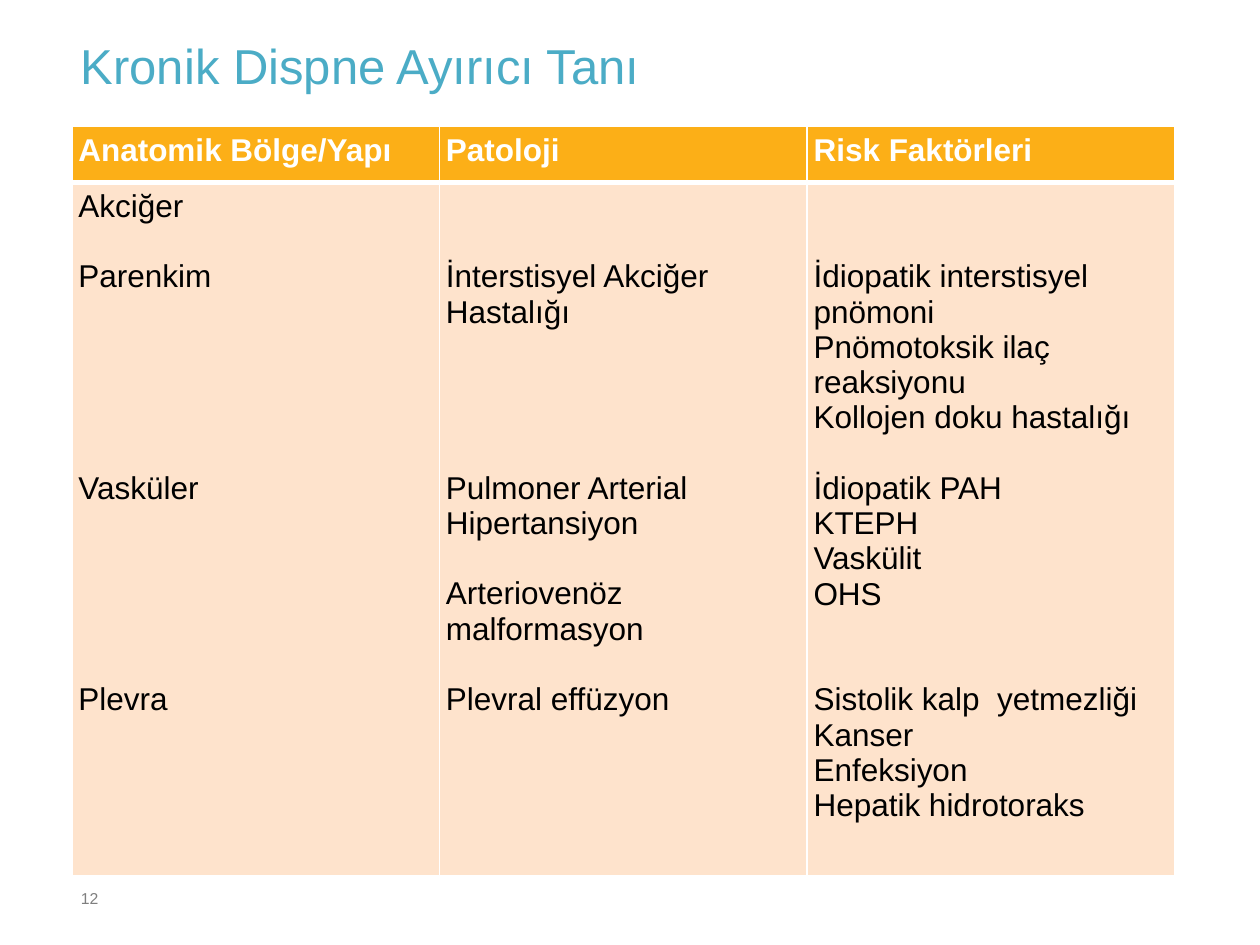
from lxml.etree import SubElement
from pptx import Presentation
from pptx.dml.color import RGBColor
from pptx.enum.text import MSO_ANCHOR, MSO_AUTO_SIZE as AutoSize
from pptx.oxml import parse_xml
from pptx.oxml.ns import nsdecls, qn
from pptx.util import Cm, Pt

TEAL = RGBColor(0x4B, 0xAC, 0xC6)
ORANGE = RGBColor(0xFC, 0xAF, 0x17)
PEACH = RGBColor(0xFE, 0xE3, 0xCC)
WHITE = RGBColor(0xFF, 0xFF, 0xFF)
BLACK = RGBColor(0, 0, 0)
GREY = RGBColor(0x7F, 0x7F, 0x7F)

LINE = 20.1  # points taken by one line of 18 pt text
HEADERS = ["Anatomik Bölge/Yapı", "Patoloji", "Risk Faktörleri"]
# Each column: (empty lines above, text)
COLUMNS = [
    [(0, "Akciğer"), (1, "Parenkim"), (5, "Vasküler"), (5, "Plevra")],
    [(2, "İnterstisyel Akciğer Hastalığı"),
     (4, "Pulmoner Arterial Hipertansiyon"),
     (1, "Arteriovenöz malformasyon"),
     (1, "Plevral effüzyon")],
    [(2, "İdiopatik interstisyel pnömoni"),
     (0, "Pnömotoksik ilaç reaksiyonu"),
     (0, "Kollojen doku hastalığı"),
     (1, "İdiopatik PAH"), (0, "KTEPH"), (0, "Vaskülit"), (0, "OHS"),
     (2, "Sistolik kalp  yetmezliği"),
     (0, "Kanser"), (0, "Enfeksiyon"), (0, "Hepatik hidrotoraks")],
]


class SlideBuilder:
    font = "Arial"
    margin = Cm(0.13)
    sides = ("margin_left", "margin_top", "margin_right", "margin_bottom")

    def __init__(self, s):
        self.s = s

    def add_run(self, p, text, size, color, bold=False):
        r = p.add_run()
        r.text = text
        font = {"name": self.font, "size": Pt(size), "bold": bold}
        for name, value in font.items():
            setattr(r.font, name, value)
        r.font.color.rgb = color

    def pad(self, target):
        for side in self.sides:
            setattr(target, side, self.margin)

    def text(self, box, text, size, color, wrap=True, line_spacing=None):
        tf = self.s.shapes.add_textbox(*map(Cm, box)).text_frame
        self.pad(tf)
        tf.word_wrap = wrap
        tf.auto_size = AutoSize.NONE if wrap else AutoSize.SHAPE_TO_FIT_TEXT
        p = tf.paragraphs[0]
        p.line_spacing = line_spacing
        self.add_run(p, text, size, color)

    def borders(self, cell, **widths):
        """Draw white borders; widths are points by side, L, R, T, B in order."""
        tc_pr = cell._tc.get_or_add_tcPr()
        for i, (side, width) in enumerate(widths.items()):
            ln = parse_xml(f'<a:ln{side} {nsdecls("a")} w="{Pt(width)}"/>')
            fill = SubElement(ln, qn("a:solidFill"))
            SubElement(fill, qn("a:srgbClr"), val=str(WHITE))
            tc_pr.insert(i, ln)

    def cell(self, cell, items, fill, color, bold, top, bottom):
        """Fill a cell with paragraphs given as (empty lines above, text)."""
        self.pad(cell)
        cell.margin_top = self.margin + Pt(items[0][0] * LINE)
        cell.vertical_anchor = MSO_ANCHOR.TOP
        cell.fill.solid()
        cell.fill.fore_color.rgb = fill
        self.borders(cell, L=1, R=1, T=top, B=bottom)
        tf = cell.text_frame
        for i, (gap, text) in enumerate(items):
            p = tf.add_paragraph() if i else tf.paragraphs[0]
            if i and gap:
                p.space_before = Pt(gap * LINE)
            self.add_run(p, text, 18, color, bold)

    def table(self, box, heights, headers, columns):
        shape = self.s.shapes.add_table(len(heights), len(headers), *map(Cm, box))
        table = shape.table
        table.horz_banding = False
        for row, height in zip(table.rows, heights):
            row.height = Cm(height)
        for i, (header, items) in enumerate(zip(headers, columns)):
            self.cell(table.cell(0, i), [(0, header)], ORANGE, WHITE, True, 1, 3)
            self.cell(table.cell(1, i), items, PEACH, BLACK, False, 3, 1)


def main():
    prs = Presentation()
    prs.slide_width, prs.slide_height = Cm(25.4), Cm(19.05)
    sb = SlideBuilder(prs.slides.add_slide(prs.slide_layouts[6]))
    sb.text((1.5, 0.86, 23.11, 2.24), "Kronik Dispne Ayırıcı Tanı", 28, TEAL,
            line_spacing=0.75)
    sb.table((1.45, 2.54, 22.23, 15.11), (1.14, 13.97), HEADERS, COLUMNS)
    sb.text((1.5, 17.78, 0.64, 0.58), "12", 9, GREY, wrap=False)
    prs.save("out.pptx")


if __name__ == "__main__":
    main()
